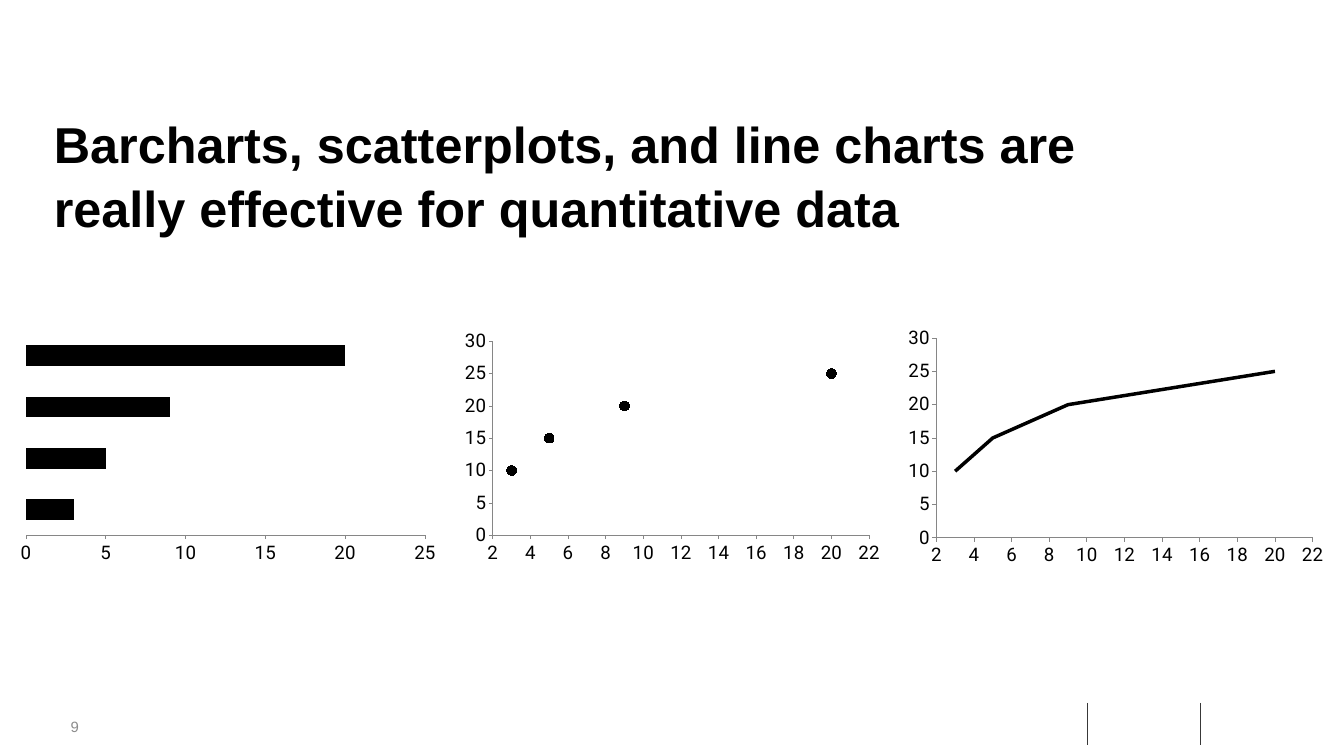
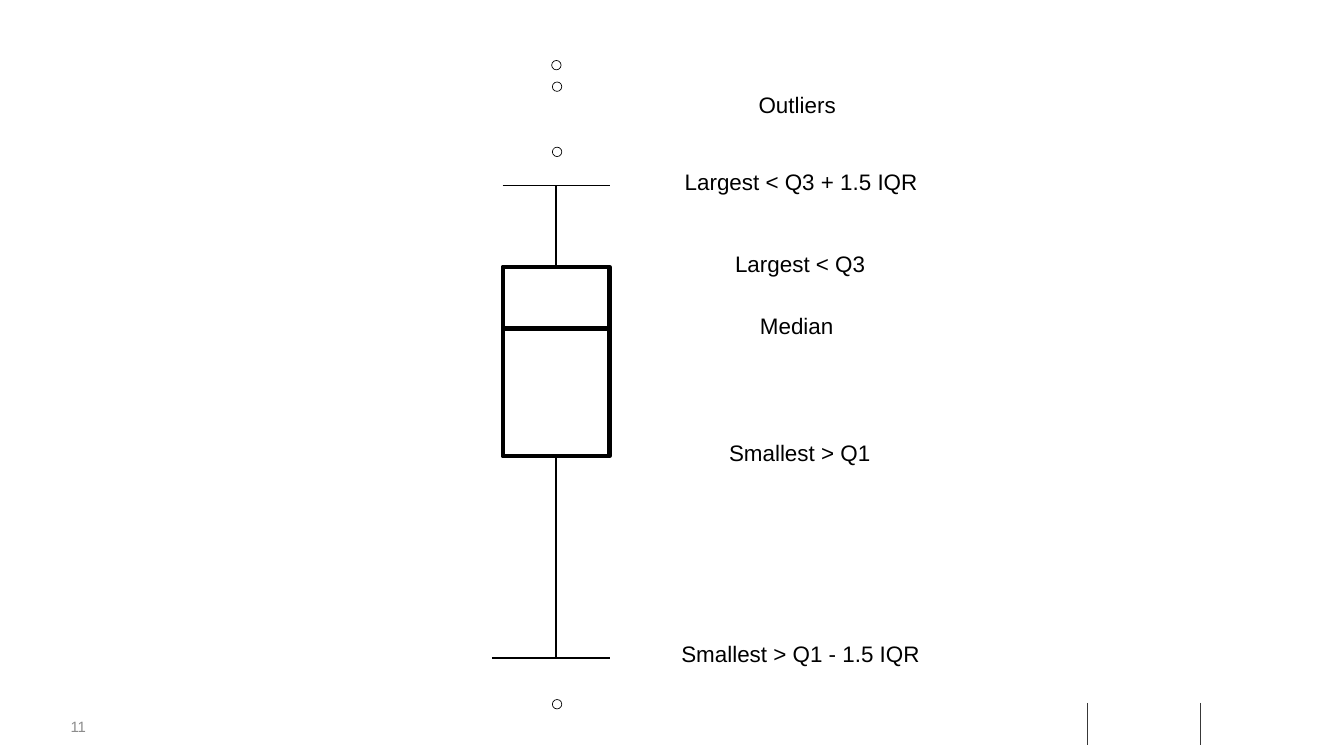
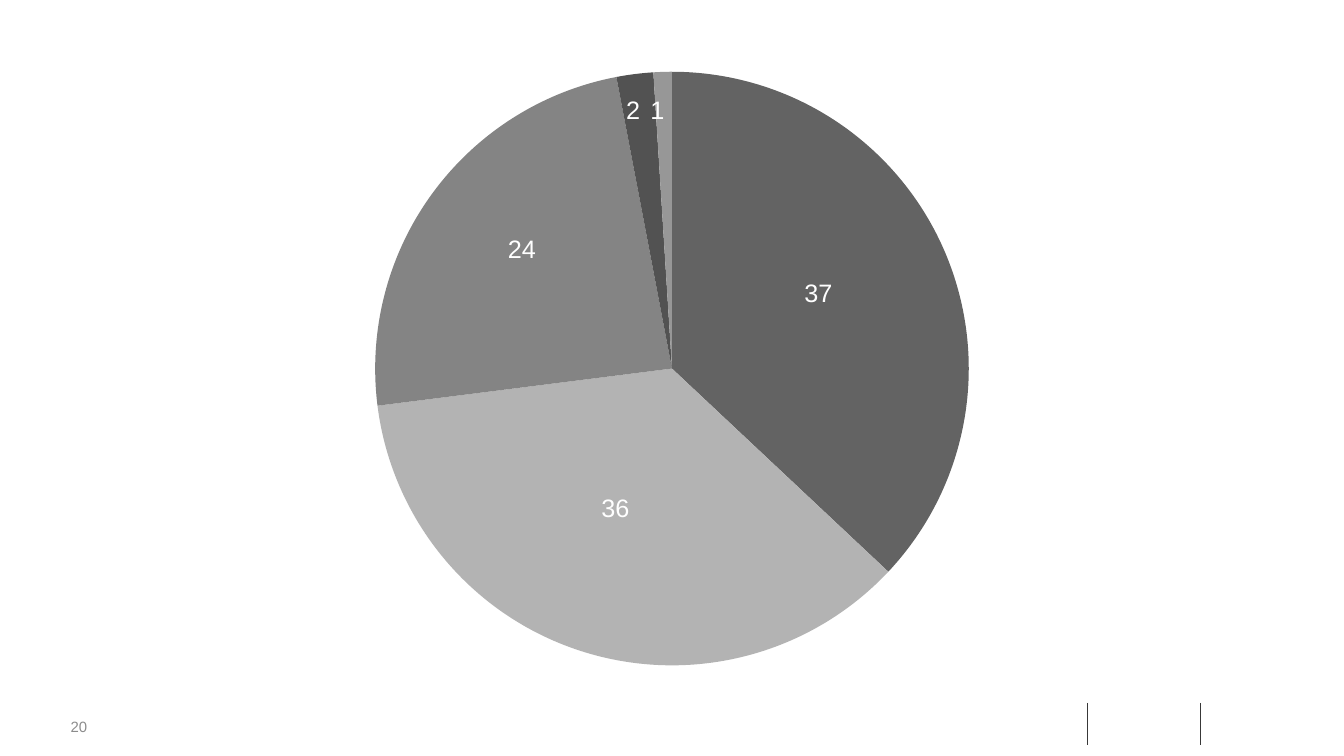
from lxml.etree import SubElement
from pptx import Presentation
from pptx.chart.data import CategoryChartData, XyChartData
from pptx.dml.color import RGBColor
from pptx.enum.chart import XL_CHART_TYPE as ChartType, XL_MARKER_STYLE as Marker, XL_TICK_MARK as Tick
from pptx.enum.shapes import MSO_CONNECTOR as Connector, MSO_SHAPE as Shape
from pptx.enum.text import MSO_ANCHOR as Anchor, MSO_AUTO_SIZE as AutoSize, PP_ALIGN as Align
from pptx.oxml.ns import qn
from pptx.util import Pt

PX = 9144
BLACK, WHITE, RULE, NUMBER, AXIS = "000000", "FFFFFF", "383838", "8C8C8C", "868686"
rgb = RGBColor.from_string


def write(box, text, size=24, color=BLACK, bold=False, wrap=False, inset=None,
          anchor=Anchor.TOP, spacing=None):
    frame = box.text_frame
    frame.auto_size = AutoSize.NONE
    frame.word_wrap = wrap
    frame.vertical_anchor = anchor
    if inset is not None:
        frame.margin_left = frame.margin_right = frame.margin_top = frame.margin_bottom = inset
    para = frame.paragraphs[0]
    para.alignment = Align.LEFT
    para.line_spacing = spacing
    span = para.add_run()
    span.text = text
    span.font.name = "Arial"
    span.font.size = Pt(size)
    span.font.bold = bold
    span.font.color.rgb = rgb(color)


def draw_line(page, x1, y1, x2, y2, color=BLACK, width=2):
    line = page.shapes.add_connector(Connector.STRAIGHT, x1 * PX, y1 * PX, x2 * PX, y2 * PX)
    line.line.color.rgb = rgb(color)
    line.line.width = Pt(width)
    SubElement(line._element.spPr, qn("a:effectLst"))


deck = Presentation()
deck.slide_width, deck.slide_height = 2000 * PX, 1125 * PX

pages = []
for number, layout in (("9", 5), ("11", 6), ("20", 6)):
    page = deck.slides.add_slide(deck.slide_layouts[layout])
    for x in (1618, 1786):
        draw_line(page, x, 1046, x, 1109, RULE, 1)
    box = page.shapes.add_textbox(105 * PX, 1068 * PX, 59 * PX, 27 * PX)
    write(box, number, size=16, color=NUMBER, inset=0, anchor=Anchor.MIDDLE)
    pages.append(page)
charts_page, boxplot_page, pie_page = pages

title = charts_page.shapes.title
title.left, title.top, title.width, title.height = 70 * PX, 159 * PX, 1744 * PX, 277 * PX
write(title, "Barcharts, scatterplots, and line charts are really effective for quantitative data",
      size=54, bold=True, wrap=True, spacing=1.05)

x_values, y_values = (3, 5, 9, 20), (10, 15, 20, 25)
bar_data = CategoryChartData()
bar_data.categories = ["1", "2", "3", "4"]
bar_data.add_series("Series 1", x_values)
point_data = XyChartData()
point_series = point_data.add_series("Series 1")
for x, y in zip(x_values, y_values):
    point_series.add_data_point(x, y)

for kind, data, left, top, height in (
    (ChartType.BAR_CLUSTERED, bar_data, 18, 484, 363),
    (ChartType.XY_SCATTER, point_data, 679, 484, 363),
    (ChartType.XY_SCATTER_LINES_NO_MARKERS, point_data, 1339, 479, 372),
):
    chart = charts_page.shapes.add_chart(
        kind, left * PX, top * PX, 643 * PX, height * PX, data).chart
    chart.has_title = chart.has_legend = False
    chart.font.name, chart.font.size = "Calibri", Pt(10)
    chart.font.color.rgb = rgb(BLACK)
    for axis in (chart.category_axis, chart.value_axis):
        axis.has_major_gridlines = False
        axis.major_tick_mark, axis.minor_tick_mark = Tick.OUTSIDE, Tick.NONE
        axis.format.line.color.rgb = rgb(AXIS)
        labels = axis.tick_labels.font
        labels.name, labels.size = "Roboto", Pt(20)
        labels.color.rgb = rgb(BLACK)
    plot = chart.plots[0]
    plot.vary_by_categories = False
    series = plot.series[0]
    values = chart.value_axis
    values.minimum_scale, values.major_unit = 0, 5
    if kind == ChartType.BAR_CLUSTERED:
        chart.category_axis.visible = False
        values.maximum_scale = 25
        plot.gap_width = 150
        series.format.fill.solid()
        series.format.fill.fore_color.rgb = rgb(BLACK)
        continue
    values.maximum_scale = 30
    across = chart.category_axis
    across.minimum_scale, across.maximum_scale, across.major_unit = 2, 22, 2
    if kind == ChartType.XY_SCATTER:
        series.format.line.fill.background()
        series.marker.style, series.marker.size = Marker.CIRCLE, 10
        series.marker.format.fill.solid()
        series.marker.format.fill.fore_color.rgb = rgb(BLACK)
        series.marker.format.line.color.rgb = rgb(BLACK)
    else:
        series.format.line.color.rgb = rgb(BLACK)
        series.format.line.width = Pt(3.75)

for text, left, top, width in (
    ("Median", 1121, 459, 131),
    ("Outliers", 1119, 131, 136),
    ("Largest < Q3 + 1.5 IQR", 1009, 246, 370),
    ("Smallest > Q1 - 1.5 IQR", 1004, 947, 378),
    ("Largest < Q3", 1084, 367, 216),
    ("Smallest > Q1", 1075, 649, 232),
):
    write(boxplot_page.shapes.add_textbox(left * PX, top * PX, width * PX, 50 * PX), text)

draw_line(boxplot_page, 828, 276, 828, 977)
draw_line(boxplot_page, 748, 276, 908, 276)
draw_line(boxplot_page, 732, 979, 908, 979)
quartiles = (Shape.RECTANGLE, 748, 397, 159, 282, 4.5)
outliers = [(Shape.OVAL, left, top, 14, 14, 0.75)
            for left, top in ((822, 219), (822, 1041), (822, 122), (821, 90))]
for kind, left, top, width, height, weight in [quartiles, *outliers]:
    shape = boxplot_page.shapes.add_shape(kind, left * PX, top * PX, width * PX, height * PX)
    shape.shadow.inherit = False
    shape.fill.solid()
    shape.fill.fore_color.rgb = rgb(WHITE)
    shape.line.color.rgb = rgb(BLACK)
    shape.line.width = Pt(weight)
draw_line(boxplot_page, 748, 489, 908, 489, width=4.5)

slices = (
    (37, "636363", 1187, 408, 62),
    (36, "B3B3B3", 885, 728, 62),
    (24, "848484", 746, 342, 62),
    (2, "525252", 922, 135, 41),
    (1, "979797", 958, 135, 41),
)
pie_data = CategoryChartData()
pie_data.categories = ["1", "2", "3", "4", "5"]
pie_data.add_series("Series 1", [value for value, *_ in slices])
pie = pie_page.shapes.add_chart(
    ChartType.PIE, 325 * PX, 93 * PX, 1350 * PX, 911 * PX, pie_data).chart
pie.has_title = pie.has_legend = False
pie.font.name, pie.font.size = "Calibri", Pt(18)
pie.font.color.rgb = rgb(BLACK)
for index, (value, color, left, top, width) in enumerate(slices):
    wedge = pie.plots[0].series[0].points[index].format
    wedge.fill.solid()
    wedge.fill.fore_color.rgb = rgb(color)
    wedge.line.fill.background()
    box = pie_page.shapes.add_textbox(left * PX, top * PX, width * PX, 56 * PX)
    write(box, str(value), size=27, color=WHITE)

deck.save("out.pptx")
